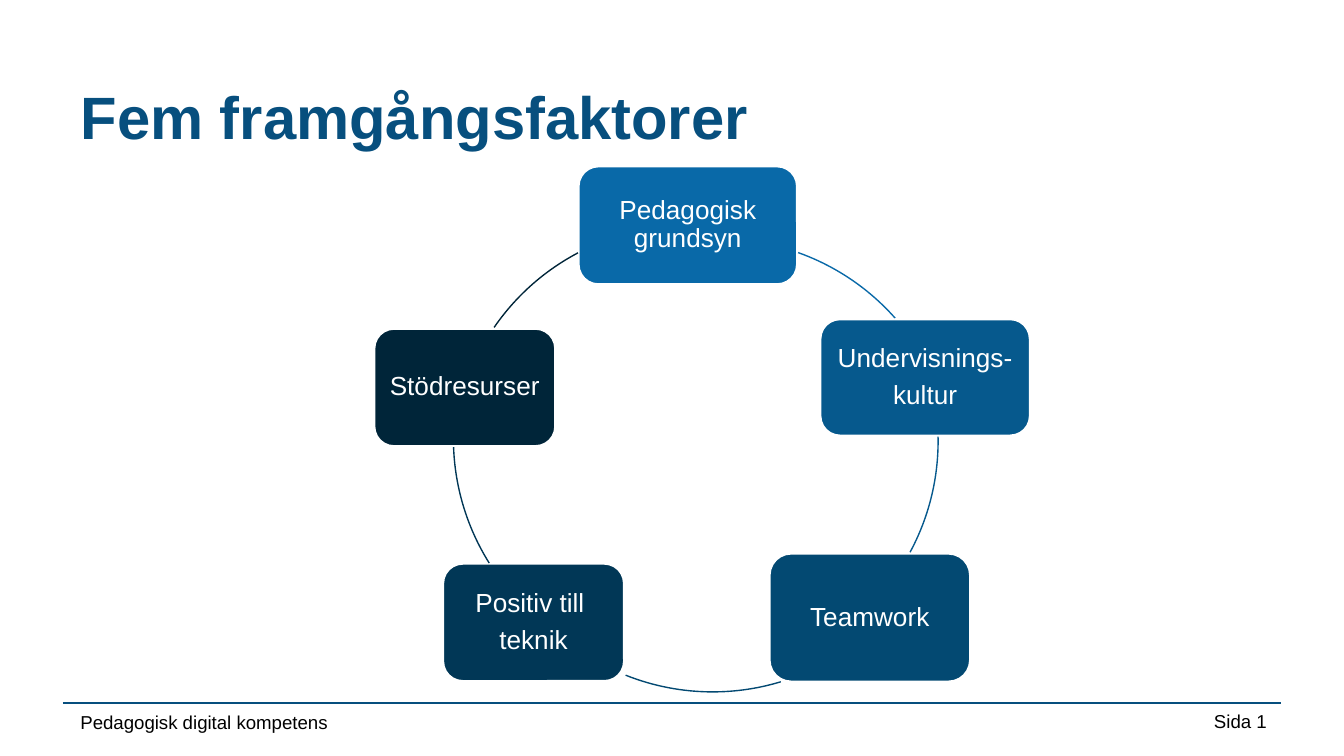
from dataclasses import dataclass
from math import cos, radians, sin

from lxml.etree import SubElement
from pptx import Presentation
from pptx.dml.color import RGBColor
from pptx.enum.shapes import MSO_CONNECTOR as Connector, MSO_SHAPE as Shape
from pptx.enum.text import MSO_ANCHOR as Anchor, MSO_AUTO_SIZE as AutoSize, PP_ALIGN as Align
from pptx.oxml.ns import qn
from pptx.util import Cm, Pt

COLORS = {
    "title": "074F7E",
    "white": "FFFFFF",
    "black": "000000",
    "pedagogy": "0969A8",
    "culture": "06598D",
    "teamwork": "034972",
    "technology": "013756",
    "support": "002539",
}
FONT = "Arial"
ARC_RADIUS = 4.43
ANGLE_UNITS = 60000  # DrawingML units per degree


@dataclass
class Factor:
    """A box and the arc leading on from it; lengths in cm, angles in degrees."""
    lines: list[str]
    color: str
    box: tuple[float, float, float, float]
    arc_center: tuple[float, float]
    arc_angles: tuple[float, float]


FACTORS = [
    Factor(["Pedagogisk grundsyn"], "pedagogy",
           (10.94, 3.15, 4.12, 2.22), (13.6, 8.95), (-70.4, -41.5)),
    Factor(["Undervisnings-", "kultur"], "culture",
           (15.51, 6.04, 3.95, 2.19), (13.3, 8.34), (-1.1, 28.3)),
    Factor(["Teamwork"], "teamwork",
           (14.55, 10.47, 3.78, 2.41), (13.47, 8.65), (73.1, 111.8)),
    Factor(["Positiv till ", "teknik"], "technology",
           (8.38, 10.66, 3.41, 2.21), (13, 8.29), (147.9, 177.9)),
    Factor(["Stödresurser"], "support",
           (7.08, 6.22, 3.41, 2.21), (12.99, 8.7), (214.5, 242.2)),
]


def rgb(name: str) -> RGBColor:
    return RGBColor.from_string(COLORS[name])


def write_text(shape, lines: list[str], *, size: float, color: str, bold: bool = False,
               align=Align.LEFT, line_spacing: float = 1.0, space_after: float = 0,
               inset: float | None = None) -> None:
    frame = shape.text_frame
    frame.word_wrap = True
    frame.auto_size = AutoSize.NONE
    frame.vertical_anchor = Anchor.MIDDLE
    if inset is not None:
        frame.margin_left = frame.margin_right = Cm(inset)
        frame.margin_top = frame.margin_bottom = Cm(inset)
    frame.text = "\n".join(lines)
    for paragraph in frame.paragraphs:
        paragraph.alignment = align
        paragraph.line_spacing = line_spacing
        paragraph.space_before = Pt(0)
        paragraph.space_after = Pt(space_after)
        for run in paragraph.runs:
            run.font.name = FONT
            run.font.size = Pt(size)
            run.font.bold = bold
            run.font.color.rgb = rgb(color)


def add_factor_box(slide, factor: Factor) -> None:
    shape = slide.shapes.add_shape(Shape.ROUNDED_RECTANGLE, *map(Cm, factor.box))
    shape.shadow.inherit = False
    shape.fill.solid()
    shape.fill.fore_color.rgb = rgb(factor.color)
    shape.line.color.rgb = rgb("white")
    shape.line.width = Pt(0.85)
    write_text(shape, factor.lines, size=14, color="white", align=Align.CENTER,
               line_spacing=0.9, space_after=4.9, inset=0.15)


def add_arc(slide, factor: Factor) -> None:
    x, y = factor.arc_center
    start, end = factor.arc_angles
    radius = ARC_RADIUS
    # The corner points give the outline the frame of the full circle
    builder = slide.shapes.build_freeform(Cm(x + radius * cos(radians(start))),
                                          Cm(y + radius * sin(radians(start))))
    corners = [(Cm(x - radius), Cm(y - radius)), (Cm(x + radius), Cm(y + radius))]
    builder.add_line_segments(corners, close=False)
    arc = builder.convert_to_shape()

    # One true arc takes the place of the straight segments
    outline = next(arc._element.iter(qn("a:path")))
    for segment in outline.findall(qn("a:lnTo")):
        outline.remove(segment)
    SubElement(outline, qn("a:arcTo"), wR=str(Cm(radius)), hR=str(Cm(radius)),
               stAng=str(round(start % 360 * ANGLE_UNITS)),
               swAng=str(round((end - start) * ANGLE_UNITS)))

    arc.shadow.inherit = False
    arc.fill.background()
    arc.line.color.rgb = rgb(factor.color)
    arc.line.width = Pt(0.75)


def add_footer(slide) -> None:
    rule = slide.shapes.add_connector(Connector.STRAIGHT, Cm(1.19), Cm(13.29), Cm(24.21), Cm(13.29))
    rule.line.color.rgb = rgb("title")
    rule.line.width = Pt(1)
    SubElement(rule._element.spPr, qn("a:effectLst"))

    page = slide.shapes.add_textbox(Cm(18.27), Cm(13.25), Cm(5.92), Cm(0.76))
    write_text(page, ["Sida 1"], size=10, color="black", align=Align.RIGHT)
    subject = slide.shapes.add_textbox(Cm(1.27), Cm(13.26), Cm(8.41), Cm(0.76))
    write_text(subject, ["Pedagogisk digital kompetens"], size=10, color="black")


def main() -> None:
    presentation = Presentation()
    presentation.slide_width, presentation.slide_height = Cm(25.4), Cm(14.29)
    slide = presentation.slides.add_slide(presentation.slide_layouts[5])

    # Footer
    add_footer(slide)

    # Title
    title = slide.shapes.title
    title.left, title.top, title.width, title.height = Cm(1.27), Cm(0.99), Cm(22.86), Cm(2.39)
    write_text(title, ["Fem framgångsfaktorer"], size=32, color="title", bold=True)

    # Cycle of factors
    for factor in FACTORS:
        add_factor_box(slide, factor)
        add_arc(slide, factor)

    presentation.save("out.pptx")


if __name__ == "__main__":
    main()
